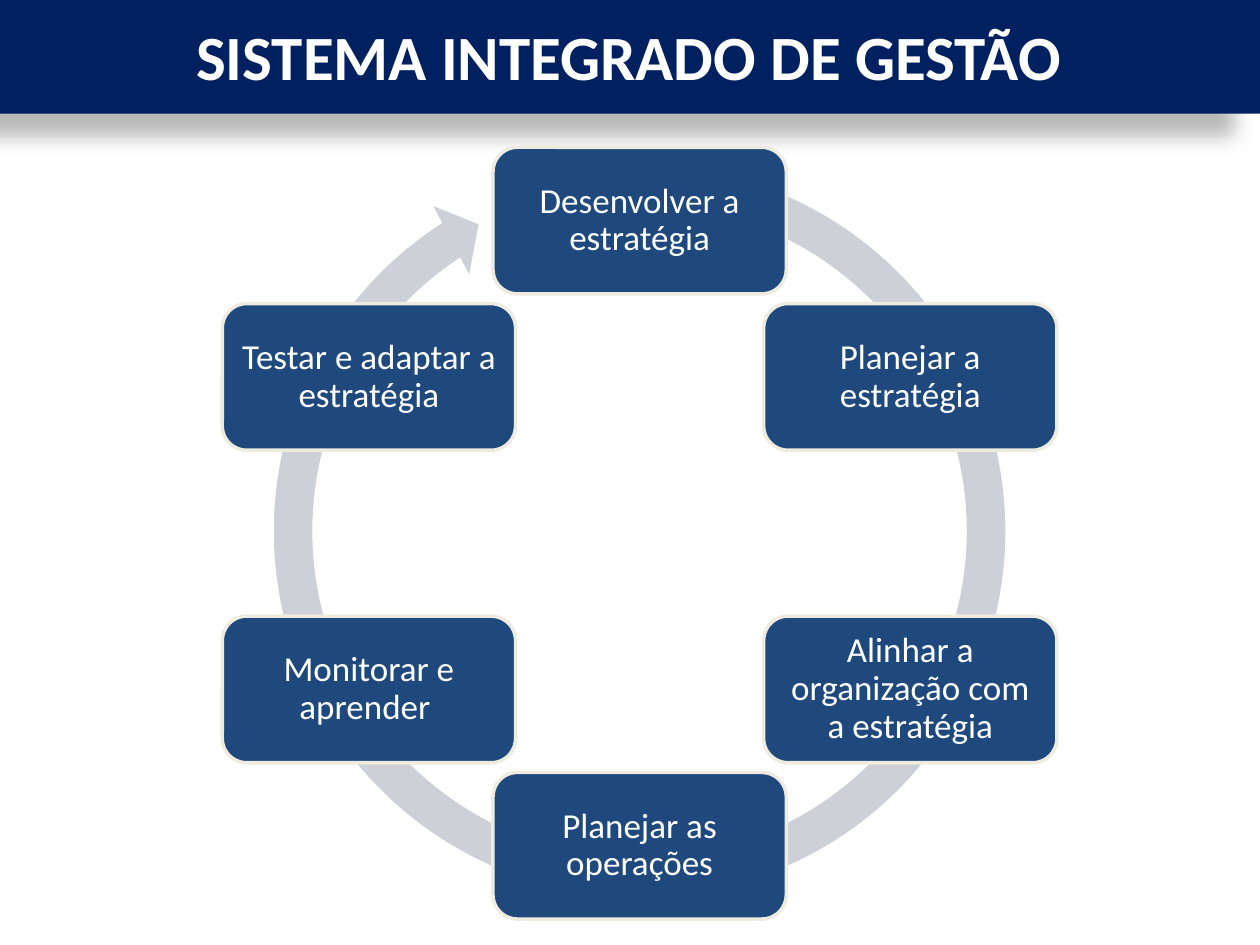
from math import cos, radians, sin

from lxml.etree import SubElement
from pptx import Presentation
from pptx.dml.color import RGBColor
from pptx.enum.shapes import MSO_SHAPE
from pptx.enum.text import MSO_ANCHOR, PP_ALIGN
from pptx.oxml.ns import qn
from pptx.util import Pt

NAVY = RGBColor(0x00, 0x20, 0x60)
BLUE = RGBColor(0x1F, 0x49, 0x7D)
CREAM = RGBColor(0xEE, 0xEC, 0xE1)
GREY = RGBColor(0xCD, 0xD0, 0xD7)
WHITE = RGBColor(0xFF, 0xFF, 0xFF)

TITLE = "SISTEMA INTEGRADO DE GESTÃO"
STEPS = [
    "Desenvolver a estratégia",
    "Planejar a estratégia",
    "Alinhar a organização com a estratégia",
    "Planejar as operações",
    "Monitorar e aprender ",
    "Testar e adaptar a estratégia",
]
STEP_WIDTH, STEP_HEIGHT = 167.6, 83.8
ARROW_SIZE = 440
ARROW_ADJUSTMENTS = [0.05, 3.13, 142.25, 171.29, 0.05]


def add_filled_shape(slide, kind, box, fill):
    shape = slide.shapes.add_shape(kind, *(Pt(length) for length in box))
    shape.shadow.inherit = False
    shape.fill.solid()
    shape.fill.fore_color.rgb = fill
    shape.line.fill.background()
    return shape


def write_text(shape, text, size, bold=False):
    frame = shape.text_frame
    frame.word_wrap = True
    frame.vertical_anchor = MSO_ANCHOR.MIDDLE
    paragraph = frame.paragraphs[0]
    paragraph.alignment = PP_ALIGN.CENTER
    run = paragraph.add_run()
    run.text = text
    formats = {"name": "Calibri", "size": Pt(size), "bold": bold}
    for name, value in formats.items():
        setattr(run.font, name, value)
    run.font.color.rgb = WHITE
    return paragraph


def add_soft_shadow(shape, blur, distance, degrees, opacity):
    effects = shape.element.spPr.find(qn("a:effectLst"))
    shadow = SubElement(effects, qn("a:outerShdw"), {
        "blurRad": str(Pt(blur)),
        "dist": str(Pt(distance)),
        "dir": str(degrees * 60000),
        "algn": "ctr",
        "rotWithShape": "0",
    })
    color = SubElement(shadow, qn("a:srgbClr"), val="000000")
    SubElement(color, qn("a:alpha"), val=str(opacity * 1000))


def add_title_bar(slide, box):
    bar = add_filled_shape(slide, MSO_SHAPE.RECTANGLE, box, NAVY)
    add_soft_shadow(bar, blur=11.8, distance=19.7, degrees=141, opacity=28)
    write_text(bar, TITLE, 36, bold=True)


def add_step(slide, box, text):
    step = add_filled_shape(slide, MSO_SHAPE.ROUNDED_RECTANGLE, box, BLUE)
    step.line.color.rgb = CREAM
    step.line.width = Pt(2)
    for side in ("left", "top", "right", "bottom"):
        setattr(step.text_frame, f"margin_{side}", Pt(6))
    write_text(step, text, 20).line_spacing = 0.9


def add_cycle(slide, box):
    """Spread the steps clockwise from the top, over a circular arrow."""
    left, top, width, height = box
    center_x, center_y = left + width / 2, top + height / 2
    radius = (height - STEP_HEIGHT) / 2

    arrow_box = (center_x - ARROW_SIZE / 2, top - 0.7, ARROW_SIZE, ARROW_SIZE)
    arrow = add_filled_shape(slide, MSO_SHAPE.CIRCULAR_ARROW, arrow_box, GREY)
    for index, value in enumerate(ARROW_ADJUSTMENTS):
        arrow.adjustments[index] = value

    for index, text in enumerate(STEPS):
        angle = radians(index * 360 / len(STEPS))
        step_left = center_x + radius * sin(angle) - STEP_WIDTH / 2
        step_top = center_y - radius * cos(angle) - STEP_HEIGHT / 2
        add_step(slide, (step_left, step_top, STEP_WIDTH, STEP_HEIGHT), text)


def main():
    presentation = Presentation()
    presentation.slide_width, presentation.slide_height = Pt(720), Pt(540)
    slide = presentation.slides.add_slide(presentation.slide_layouts[6])
    add_title_bar(slide, (-1.5, -2, 721.5, 67))
    add_cycle(slide, (127, 84.2, 477, 441))
    presentation.save("out.pptx")


if __name__ == "__main__":
    main()
